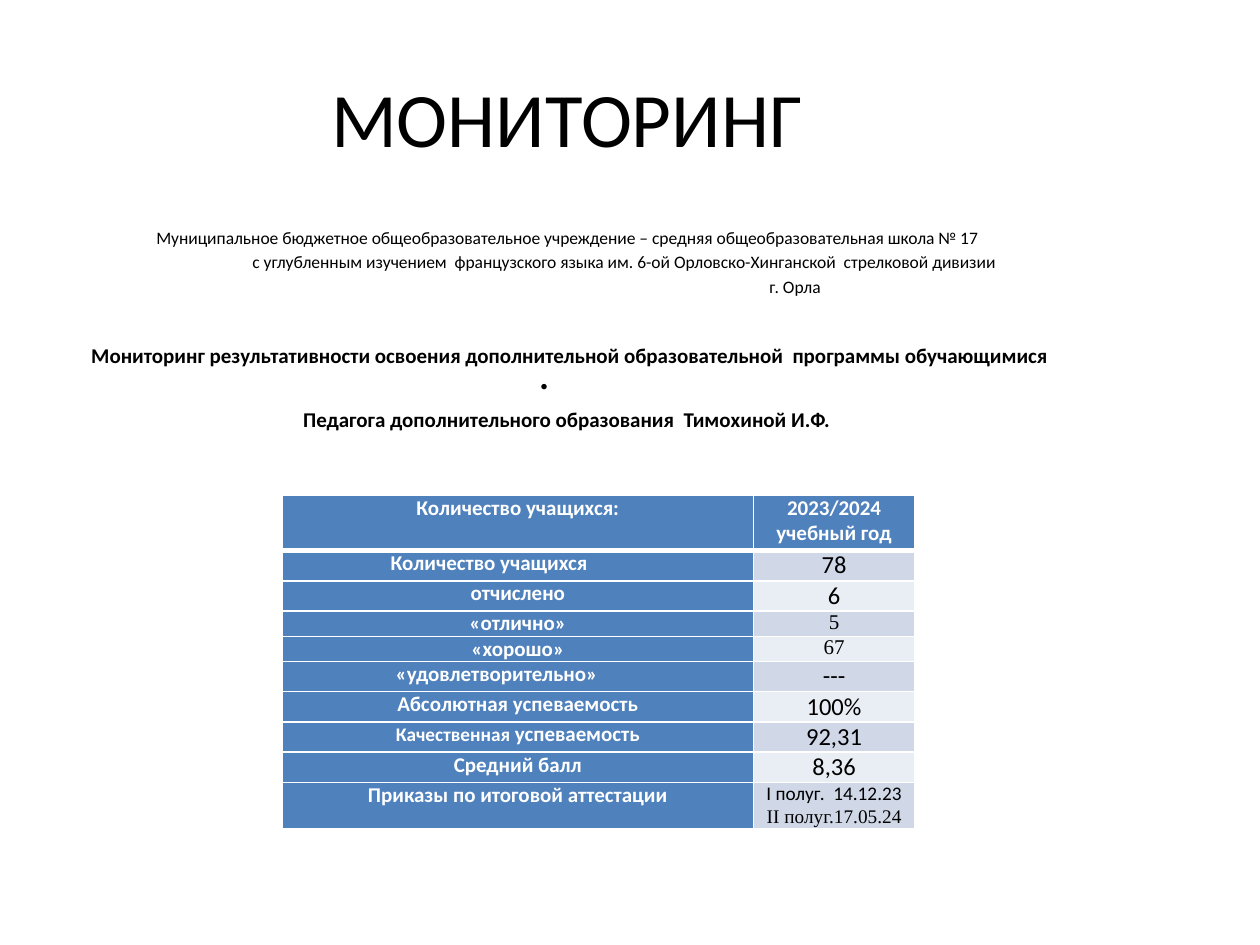
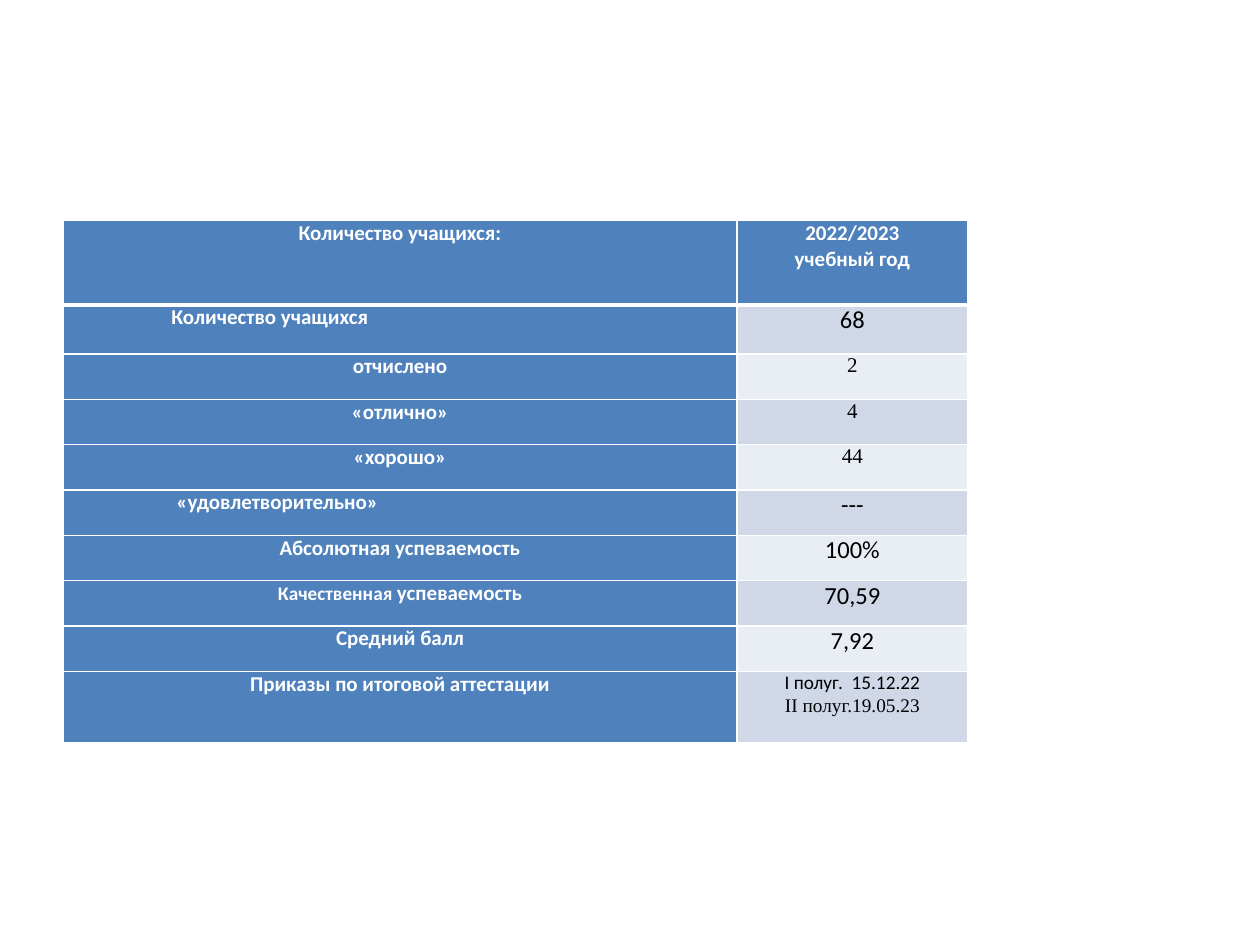
import dataclasses

import lxml.etree
import pptx
import pptx.dml.color
import pptx.enum.text
import pptx.oxml.ns
import pptx.util

Inches = pptx.util.Inches
Pt = pptx.util.Pt
ALIGN = pptx.enum.text.PP_ALIGN
ANCHOR = pptx.enum.text.MSO_ANCHOR


@dataclasses.dataclass(frozen=True)
class Theme:
    """Colours, fonts and type sizes shared by the slides."""
    ink: str = "000000"
    paper: str = "FFFFFF"
    accent: str = "4F81BD"
    bands: tuple = ("D0D8E8", "E9EDF4")
    font: str = "Calibri"
    serif: str = "Times New Roman"
    title: int = 44
    value: int = 14
    label: int = 12
    small: int = 11
    school: int = 10


THEME = Theme()
LABEL = {"size": THEME.label, "color": THEME.paper, "bold": True}
VALUE = {"size": THEME.value}
SERIF = {"size": THEME.label, "name": THEME.serif}
STRONG = {"size": THEME.label, "bold": True}
SCHOOL = {"size": THEME.school}

LABELS = [
    ("Количество учащихся", 0.79),
    ("отчислено", 0),
    ("«отлично»", 0),
    ("«хорошо»", 0),
    ("«удовлетворительно»", 0.83),
    ("Абсолютная успеваемость", 0),
    ("Качественная успеваемость", 0),
    ("Средний балл", 0),
    ("Приказы по итоговой аттестации", 0),
]

INTRO = [
    ("Муниципальное бюджетное общеобразовательное учреждение – средняя "
     "общеобразовательная школа № 17", SCHOOL, 0, 0),
    ("с углубленным изучением  французского языка им. 6-ой Орловско-Хинганской  "
     "стрелковой дивизии", SCHOOL, 0.9, 2),
    ("г. Орла", SCHOOL, 3.62, 2),
    ("Мониторинг результативности освоения дополнительной образовательной  "
     "программы обучающимися", STRONG, 0.05, 26),
    ("•", STRONG, 0.38, 5.5),
    ("Педагога дополнительного образования  Тимохиной И.Ф.", STRONG, 0, 2.4),
]


def assign(target, values):
    """Set each named attribute of the target."""
    for name, value in values.items():
        setattr(target, name, value)


def write(para, text, style, align=ALIGN.CENTER):
    """Add a styled span to a paragraph."""
    para.alignment = align
    span = para.add_run()
    span.text = text
    look = {"name": THEME.font, "bold": False, **style}
    look["size"] = Pt(look["size"])
    color = look.pop("color", THEME.ink)
    assign(span.font, look)
    span.font.color.rgb = pptx.dml.color.RGBColor.from_string(color)


def indent(para, margin, bullet=None):
    """Set the left margin and, if given, a hanging bullet."""
    props = para._p.get_or_add_pPr()
    props.set("marL", str(Inches(margin)))
    if bullet:
        props.set("indent", str(-Inches(margin)))
        mark = lxml.etree.SubElement(props, pptx.oxml.ns.qn("a:buChar"))
        mark.set("char", bullet)


def next_para(frame, index):
    """Return the first paragraph or a new one."""
    return frame.add_paragraph() if index else frame.paragraphs[0]


def add_text_box(page, left, top, width, height, anchor):
    """Add a wrapping text box and return its frame."""
    box = page.shapes.add_textbox(*map(Inches, (left, top, width, height)))
    assign(box.text_frame, {"word_wrap": True, "vertical_anchor": anchor})
    return box.text_frame


def add_title(page, text, left, top, width, height):
    """Add the centred slide title."""
    frame = add_text_box(page, left, top, width, height, ANCHOR.MIDDLE)
    write(frame.paragraphs[0], text, {"size": THEME.title})


def add_intro(page, left, top, width, height):
    """Add the school, the programme and the teacher."""
    frame = add_text_box(page, left, top, width, height, ANCHOR.TOP)
    for index, (text, style, margin, before) in enumerate(INTRO):
        para = next_para(frame, index)
        if before:
            para.space_before = Pt(before)
        if text == "•":
            indent(para, margin, bullet=text)
            text = " "
        else:
            indent(para, margin)
        write(para, text, style)


def add_borders(cell, bottom):
    """Draw white cell borders, with the given width at the bottom."""
    props = cell._tc.get_or_add_tcPr()
    for side, width in zip("LRTB", (1, 1, 1, bottom)):
        line = lxml.etree.SubElement(props, pptx.oxml.ns.qn(f"a:ln{side}"), w=str(Pt(width)))
        fill = lxml.etree.SubElement(line, pptx.oxml.ns.qn("a:solidFill"))
        lxml.etree.SubElement(fill, pptx.oxml.ns.qn("a:srgbClr"), val=THEME.paper)


def fill_cell(cell, lines, color, margin=0, bottom=1):
    """Format a cell and write lines, each a list of text and style pairs."""
    assign(cell, {"margin_left": Inches(0.07), "margin_right": Inches(0.07),
                  "margin_top": 0, "margin_bottom": 0,
                  "vertical_anchor": ANCHOR.TOP})
    add_borders(cell, bottom)
    cell.fill.solid()
    cell.fill.fore_color.rgb = pptx.dml.color.RGBColor.from_string(color)
    for index, spans in enumerate(lines):
        para = next_para(cell.text_frame, index)
        if margin:
            indent(para, margin)
        for text, style in spans:
            write(para, text, style, ALIGN.LEFT if margin else ALIGN.CENTER)


def label_spans(text):
    """Return the spans of a row label, with the smaller word first."""
    if text.startswith("Качественная"):
        first, second = text.split()
        return [(first + " ", {**LABEL, "size": THEME.small}), (second, LABEL)]
    return [(text, LABEL)]


def add_results(page, left, top, columns, rows, year, values, serif, orders):
    """Add the table of one school year's results."""
    frame = page.shapes.add_table(len(rows), len(columns),
                                  *map(Inches, (left, top, sum(columns), sum(rows))))
    table = frame.table
    for column, width in zip(table.columns, columns):
        column.width = Inches(width)
    for row, height in zip(table.rows, rows):
        row.height = Inches(height)
    headings = (["Количество учащихся:"], [year, "учебный год"])
    for index, heading in enumerate(headings):
        fill_cell(table.cell(0, index), [[(text, LABEL)] for text in heading],
                  THEME.accent, bottom=3)
    lines = [[[(value, SERIF if value in serif else VALUE)]] for value in values]
    small = {"size": THEME.small}
    lines.append([[(f"I полуг.  {orders[0]}", small)],
                  [(f"II полуг.{orders[1]}", {**small, "name": THEME.serif})]])
    for index, ((label, margin), value) in enumerate(zip(LABELS, lines)):
        fill_cell(table.cell(index + 1, 0), [label_spans(label)], THEME.accent, margin)
        fill_cell(table.cell(index + 1, 1), value, THEME.bands[index % 2])


def build_cover(page):
    """Build the title slide with the latest results."""
    add_title(page, "МОНИТОРИНГ", 0, 0.3, 9, 1.25)
    add_intro(page, 0, 1.75, 9, 2)
    add_results(page, 2.24, 3.93, (3.74, 1.28),
                [0.44] + [0.24] * 2 + [0.2] * 2 + [0.24] * 4 + [0.35], "2023/2024",
                ["78", "6", "5", "67", "---", "100%", "92,31", "8,36"],
                {"5", "67"}, ("14.12.23", "17.05.24"))


def build_previous_year(page):
    """Build the slide with the previous year's results."""
    add_results(page, 0.5, 1.75, (5.35, 1.83),
                [0.67, 0.39] + [0.36] * 7 + [0.57], "2022/2023",
                ["68", "2", "4", "44", "---", "100%", "70,59", "7,92"],
                {"2", "4", "44"}, ("15.12.22", "19.05.23"))


def main():
    """Build and save the deck."""
    deck = pptx.Presentation()
    assign(deck, {"slide_width": Inches(10), "slide_height": Inches(7.5)})
    for build in (build_cover, build_previous_year):
        build(deck.slides.add_slide(deck.slide_layouts[6]))
    deck.save("out.pptx")


if __name__ == "__main__":
    main()
